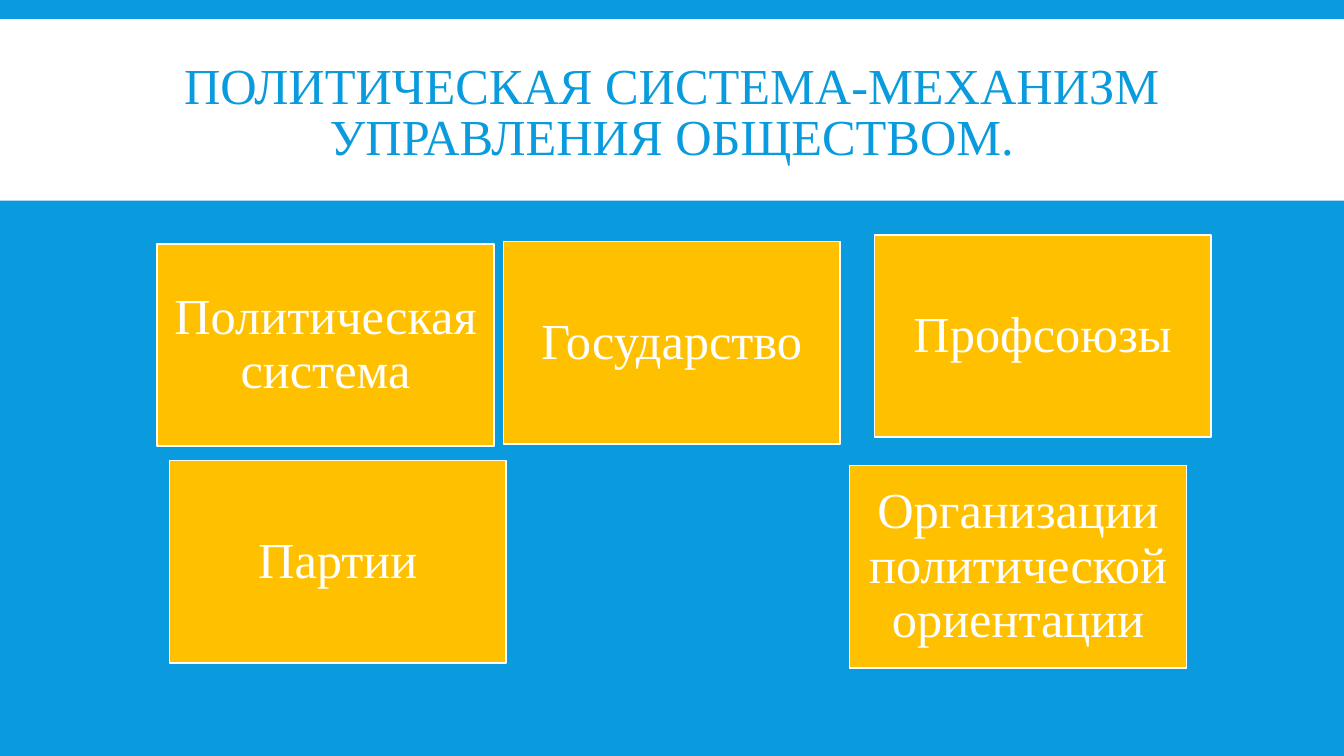
import pptx
import pptx.dml.color
import pptx.enum.shapes
import pptx.enum.text
import pptx.util

Pt = pptx.util.Pt

FONT = "Times New Roman"
BLUE = "099BDD"
WHITE = "FFFFFF"
AMBER = "FFC000"
CARD_WIDTH, CARD_HEIGHT = 240.6, 144.5
CARDS = [
    ("Государство", 359.5, 172.6),
    ("Партии", 121, 329),
    ("Профсоюзы", 624.5, 167.8),
    ("Организации политической ориентации", 607, 332.6),
    ("Политическая система", 112.3, 174.2),
]


def color(value):
    """Turn a hex string into a colour."""
    return pptx.dml.color.RGBColor.from_string(value)


def add_rectangle(slide, left, top, width, height, fill):
    """Add a filled rectangle without outline or shadow."""
    shape = slide.shapes.add_shape(
        pptx.enum.shapes.MSO_SHAPE.RECTANGLE, Pt(left), Pt(top), Pt(width), Pt(height)
    )
    shape.shadow.inherit = False
    shape.fill.solid()
    shape.fill.fore_color.rgb = color(fill)
    shape.line.fill.background()
    return shape


def write_centered(shape, text, text_color, line_spacing):
    """Write one centred paragraph in the middle of a shape."""
    frame = shape.text_frame
    frame.word_wrap = True
    frame.vertical_anchor = pptx.enum.text.MSO_ANCHOR.MIDDLE
    paragraph = frame.paragraphs[0]
    paragraph.alignment = pptx.enum.text.PP_ALIGN.CENTER
    paragraph.line_spacing = line_spacing
    run = paragraph.add_run()
    run.text = text
    run.font.name = FONT
    run.font.size = Pt(36)
    run.font.color.rgb = color(text_color)


def add_title_band(slide, left, top, width, height):
    """Add the white band with the slide title inside it."""
    add_rectangle(slide, left, top, width, height, WHITE)
    title = slide.shapes.add_textbox(
        Pt(left + 95), Pt(top + 8.6), Pt(width - 190), Pt(height - 10.8)
    )
    write_centered(title, "ПОЛИТИЧЕСКАЯ СИСТЕМА-МЕХАНИЗМ УПРАВЛЕНИЯ ОБЩЕСТВОМ.", BLUE, 0.85)


def add_card(slide, text, left, top, width, height):
    """Add an outlined amber card with its label."""
    card = add_rectangle(slide, left, top, width, height, AMBER)
    card.line.color.rgb = color(WHITE)
    card.line.width = Pt(1)
    frame = card.text_frame
    frame.margin_left = frame.margin_right = Pt(10.8)
    frame.margin_top = frame.margin_bottom = Pt(10.8)
    write_centered(card, text, WHITE, 0.9)


def main():
    """Build and save the presentation."""
    presentation = pptx.Presentation()
    presentation.slide_width = Pt(960)
    presentation.slide_height = Pt(540)
    slide = presentation.slides.add_slide(presentation.slide_layouts[6])
    slide.background.fill.solid()
    slide.background.fill.fore_color.rgb = color(BLUE)
    add_title_band(slide, 0, 13.7, 960, 129.6)
    for text, left, top in CARDS:
        add_card(slide, text, left, top, CARD_WIDTH, CARD_HEIGHT)
    presentation.save("out.pptx")


if __name__ == "__main__":
    main()
